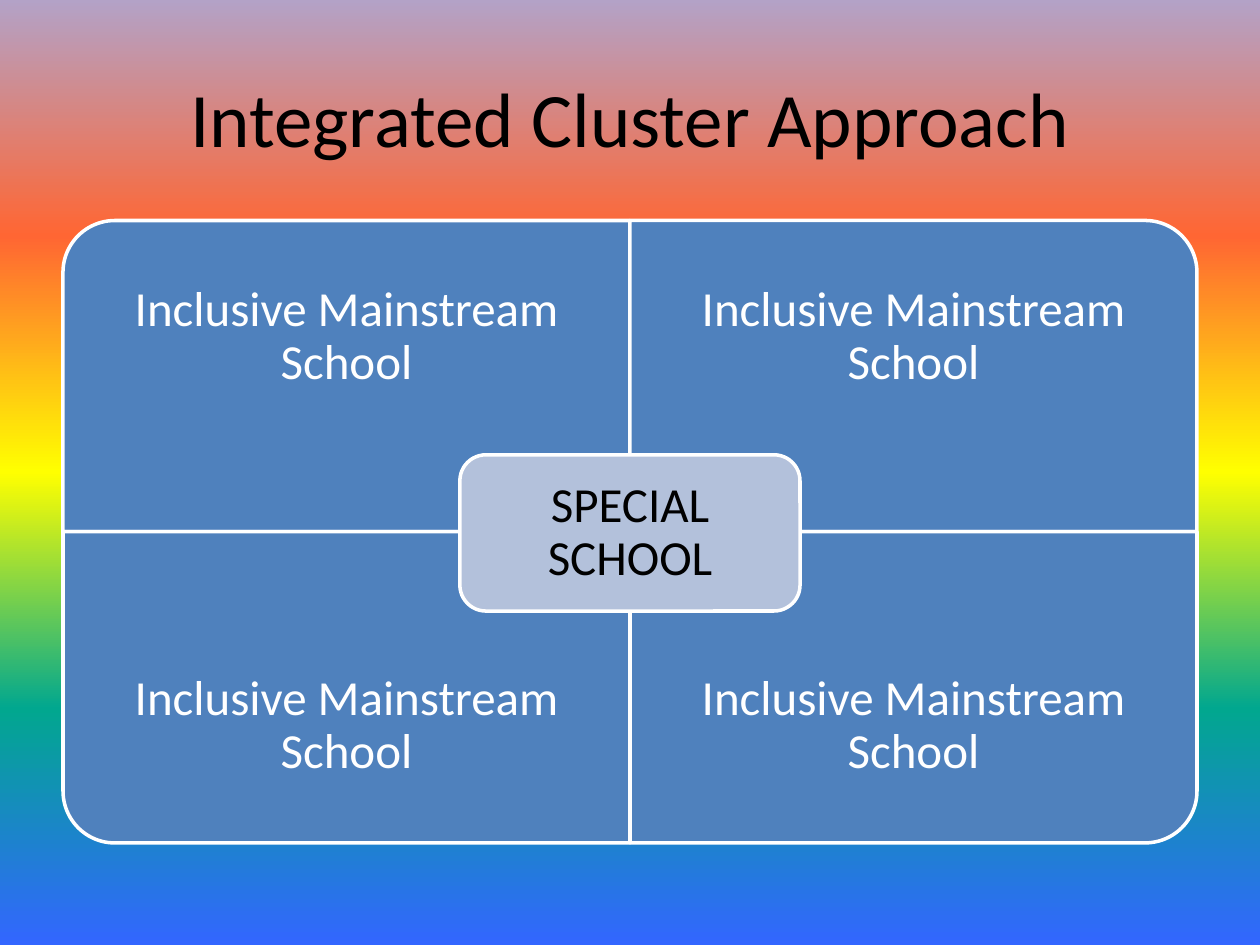
from typing import NamedTuple

from lxml.etree import SubElement
from pptx import Presentation
from pptx.dml.color import RGBColor
from pptx.enum.shapes import MSO_SHAPE
from pptx.enum.text import MSO_ANCHOR, PP_ALIGN
from pptx.oxml.ns import qn
from pptx.util import Inches, Pt

FONT = "Calibri"
WHITE, BLACK, BLUE, PALE = "FFFFFF", "000000", "4F81BD", "B3C1DB"
RAINBOW = ["B3A2C7", "FF6633", "FFFF00", "01A78F", "3366FF"]
LEFT, TOP, WIDE, HIGH = 0.5, 1.75, 4.5, 2.47


class Box(NamedTuple):
    left: float
    top: float
    width: float
    height: float


class Panel(NamedTuple):
    col: int
    row: int
    turn: int


PANELS = [Panel(0, 0, 270), Panel(1, 0, 0), Panel(0, 1, 180), Panel(1, 1, 90)]


def color(code: str) -> RGBColor:
    return RGBColor.from_string(code)


def place(box: Box) -> list:
    return [Inches(side) for side in box]


def paint(slide, codes: list) -> None:
    """Fill the background with evenly spaced colours from top to bottom."""
    fill = slide.background.fill
    fill.gradient()
    fill.gradient_angle = 270
    stops = slide.element.find(".//" + qn("a:gsLst"))
    for stop in list(stops):
        stops.remove(stop)
    for i, code in enumerate(codes):
        stop = SubElement(stops, qn("a:gs"), pos=str(100000 * i // (len(codes) - 1)))
        SubElement(stop, qn("a:srgbClr"), val=code)


def write(frame, text: str, size: int, code: str):
    """Write one centred run and return its paragraph."""
    frame.word_wrap = True
    frame.vertical_anchor = MSO_ANCHOR.MIDDLE
    para = frame.paragraphs[0]
    para.alignment = PP_ALIGN.CENTER
    run = para.add_run()
    run.text = text
    run.font.name = FONT
    run.font.size = Pt(size)
    run.font.color.rgb = color(code)
    return para


def draw(shapes, kind: MSO_SHAPE, box: Box, code: str, turn: int = 0) -> None:
    shape = shapes.add_shape(kind, *place(box))
    shape.rotation = turn
    shape.shadow.inherit = False
    shape.fill.solid()
    shape.fill.fore_color.rgb = color(code)
    shape.line.color.rgb = color(WHITE)
    shape.line.width = Pt(2)


def label(shapes, box: Box, text: str, code: str, inset: float) -> None:
    frame = shapes.add_textbox(*place(box)).text_frame
    frame.margin_left = frame.margin_right = Inches(inset)
    frame.margin_top = frame.margin_bottom = Inches(inset)
    para = write(frame, text, 28, code)
    para.line_spacing = 0.9
    para.space_after = Pt(9.8)


def school(shapes, panel: Panel) -> None:
    """Draw one quarter with its rounded corner turned outwards."""
    left, top = LEFT + panel.col * WIDE, TOP + panel.row * HIGH
    width, height = (HIGH, WIDE) if panel.turn % 180 else (WIDE, HIGH)
    box = Box(left + (WIDE - width) / 2, top + (HIGH - height) / 2, width, height)
    draw(shapes, MSO_SHAPE.ROUND_1_RECTANGLE, box, BLUE, panel.turn)
    tall = HIGH * 0.75
    area = Box(left, top + panel.row * (HIGH - tall), WIDE, tall)
    label(shapes, area, "Inclusive Mainstream School", WHITE, 0.22)


def main() -> None:
    deck = Presentation()
    deck.slide_width, deck.slide_height = Inches(10), Inches(7.5)
    slide = deck.slides.add_slide(deck.slide_layouts[5])
    paint(slide, RAINBOW)

    title = slide.shapes.title
    title.left, title.top, title.width, title.height = place(Box(0.5, 0.3, 9, 1.25))
    write(title.text_frame, "Integrated Cluster Approach", 44, BLACK)

    shapes = slide.shapes.add_group_shape().shapes
    for panel in PANELS:
        school(shapes, panel)
    draw(shapes, MSO_SHAPE.ROUNDED_RECTANGLE, Box(3.65, 3.61, 2.7, 1.24), PALE)
    label(shapes, Box(3.71, 3.67, 2.58, 1.12), "SPECIAL SCHOOL", BLACK, 0.12)

    deck.save("out.pptx")


if __name__ == "__main__":
    main()
